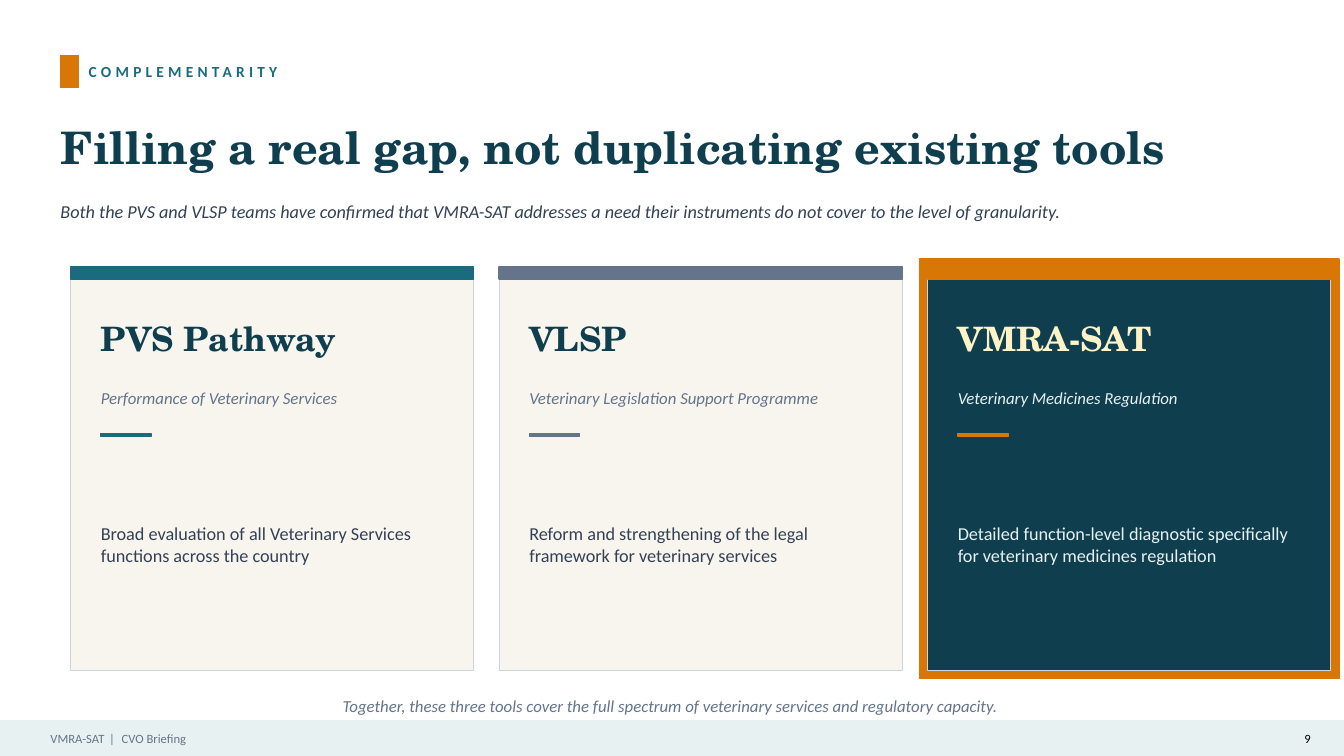
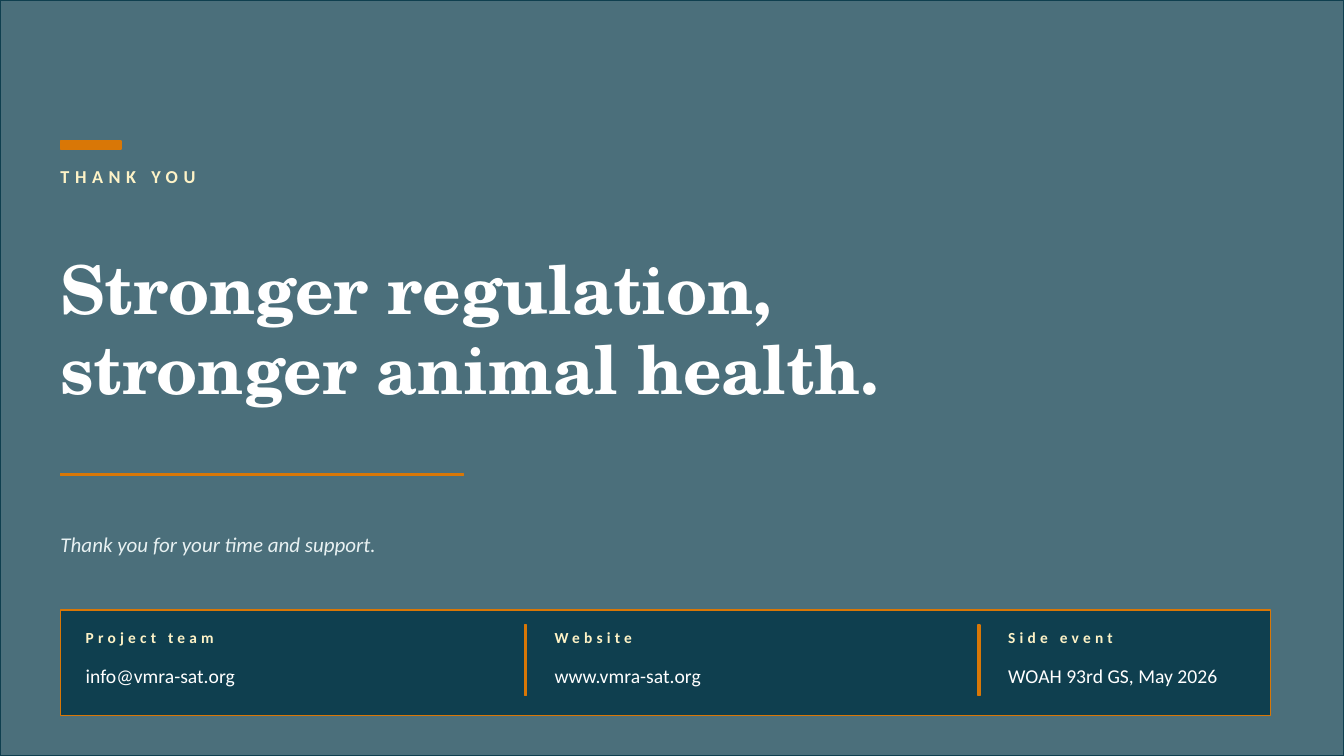
from lxml import etree
from pptx import Presentation
from pptx import util as u
from pptx.dml.color import RGBColor
from pptx.enum import shapes, text
from pptx.oxml import ns

PX = 9144
WIDTH, HEIGHT = 1333, 750
MARGIN = 60

NAVY, TEAL, ORANGE, SLATE = "0F3F4F", "1B6B7E", "D97706", "64748B"
INK, CREAM, MIST, WHITE = "334155", "FEF3C7", "E8F1F2", "FFFFFF"
PAPER, EDGE, BLACK = "F8F5EE", "CBD5E1", "000000"
SANS, SERIF = "Calibri", "TeX Gyre Schola"

SECTION = "COMPLEMENTARITY"
HEADLINE = "Filling a real gap, not duplicating existing tools"
LEAD = ("Both the PVS and VLSP teams have confirmed that VMRA-SAT addresses "
        "a need their instruments do not cover to the level of granularity.")
TOOLS = [
    {"name": "PVS Pathway", "full": "Performance of Veterinary Services",
     "role": "Broad evaluation of all Veterinary Services functions across the country",
     "accent": TEAL},
    {"name": "VLSP", "full": "Veterinary Legislation Support Programme",
     "role": "Reform and strengthening of the legal framework for veterinary services",
     "accent": SLATE},
    {"name": "VMRA-SAT", "full": "Veterinary Medicines Regulation",
     "role": "Detailed function-level diagnostic specifically for veterinary medicines regulation",
     "accent": ORANGE, "featured": True},
]
PLAIN = {"card": PAPER, "name": NAVY, "full": SLATE, "role": INK}
FEATURED = {"card": NAVY, "name": CREAM, "full": MIST, "role": MIST}
SUMMARY = ("Together, these three tools cover the full spectrum of "
           "veterinary services and regulatory capacity.")
FOOTER = [("VMRA-SAT", 0), (" | ", 1.4), ("CVO Briefing", 0)]
PAGE = "9"

THANKS = "THANK YOU"
CLOSING = ["Stronger regulation,", "stronger animal health."]
GRATITUDE = "Thank you for your time and support."
CONTACTS = [
    (85, 350, 450, "Project team", "info@vmra-sat.org"),
    (550, 350, 450, "Website", "www.vmra-sat.org"),
    (1000, 300, 300, "Side event", "WOAH 93rd GS, May 2026"),
]


def color(value):
    return RGBColor.from_string(value)


def place(part, left, top, width, height):
    part.left, part.top = left * PX, top * PX
    part.width, part.height = width * PX, height * PX


def block(slide, left, top, width, height, fill, line=None, weight=1, alpha=None):
    part = slide.shapes.add_shape(shapes.MSO_SHAPE.RECTANGLE,
                                  *(n * PX for n in (left, top, width, height)))
    part.shadow.inherit = False
    part.fill.solid()
    part.fill.fore_color.rgb = color(fill)
    part.line.color.rgb = color(line or fill)
    part.line.width = u.Pt(weight)
    if alpha:
        tint = part._element.spPr.find(ns.qn("a:solidFill"))[0]
        etree.SubElement(tint, ns.qn("a:alpha"), val=str(alpha * 1000))


def write(part, paragraphs, size, ink, face=SANS, bold=False, italic=False,
          align=text.PP_ALIGN.LEFT):
    frame = part.text_frame
    frame.word_wrap = True
    frame.auto_size = text.MSO_AUTO_SIZE.NONE
    frame.vertical_anchor = text.MSO_ANCHOR.MIDDLE
    frame.margin_left = frame.margin_right = frame.margin_top = frame.margin_bottom = 0
    for index, runs in enumerate(paragraphs):
        paragraph = frame.add_paragraph() if index else frame.paragraphs[0]
        paragraph.alignment = align
        for words, spacing in runs:
            run = paragraph.add_run()
            run.text = words
            font = run.font
            font.name, font.size, font.bold, font.italic = face, u.Pt(size), bold, italic
            font.color.rgb = color(ink)
            if spacing:
                run._r.get_or_add_rPr().set("spc", str(round(spacing * 100)))


def label(slide, left, top, width, height, words, size, ink, spacing=0, **style):
    part = slide.shapes.add_textbox(*(n * PX for n in (left, top, width, height)))
    runs = [(words, spacing)] if isinstance(words, str) else words
    write(part, [runs], size, ink, **style)


def headline(slide, top, width, height, lines, size, ink):
    title = slide.shapes.title
    title._element.getparent().append(title._element)
    place(title, MARGIN, top, width, height)
    write(title, [[(line, 0)] for line in lines], size, ink, face=SERIF, bold=True)


def footer(slide):
    block(slide, 0, 715, WIDTH, 35, MIST)
    label(slide, 50, 718, 600, 30, FOOTER, 9, SLATE)
    label(slide, 1250, 718, 50, 30, PAGE, 9, BLACK, align=text.PP_ALIGN.RIGHT)


def tool_card(slide, left, tool):
    top, side, halo, pad = 265, 400, 8, 30
    accent = tool["accent"]
    look = FEATURED if tool.get("featured") else PLAIN
    if look is FEATURED:
        block(slide, left - halo, top - halo, side + 2 * halo, side + 2 * halo, accent)
    block(slide, left, top, side, side, look["card"], EDGE, 0.5)
    block(slide, left, top, side, 12, accent)
    inner, width = left + pad, side - 2 * pad
    label(slide, inner, top + 40, width, 60, tool["name"], 24, look["name"],
          face=SERIF, bold=True)
    label(slide, inner, top + 105, width, 50, tool["full"], 12, look["full"], italic=True)
    block(slide, inner, top + 165, 50, 3, accent)
    label(slide, inner, top + 185, width, 180, tool["role"], 13, look["role"])


def complementarity(slide):
    block(slide, MARGIN, 55, 18, 32, ORANGE)
    label(slide, 88, 55, 600, 32, SECTION, 11, TEAL, 3, bold=True)
    headline(slide, 100, 1210, 90, [HEADLINE], 32, NAVY)
    label(slide, MARGIN, 185, 1210, 50, LEAD, 13, INK, italic=True)
    for index, tool in enumerate(TOOLS):
        tool_card(slide, 70 + 425 * index, tool)
    label(slide, MARGIN, 680, 1210, 40, SUMMARY, 12, SLATE, italic=True,
          align=text.PP_ALIGN.CENTER)
    footer(slide)


def thank_you(slide):
    block(slide, 0, 0, WIDTH, HEIGHT, NAVY, alpha=75)
    block(slide, MARGIN, 140, 60, 8, ORANGE)
    label(slide, MARGIN, 155, 800, 40, THANKS, 13, CREAM, 4, bold=True)
    headline(slide, 210, 1200, 230, CLOSING, 48, WHITE)
    block(slide, MARGIN, 470, 400, 2, ORANGE)
    label(slide, MARGIN, 490, 1100, 100, GRATITUDE, 15, MIST, italic=True)
    block(slide, MARGIN, 605, 1200, 105, NAVY, ORANGE)
    for index, (left, heading_width, detail_width, heading, detail) in enumerate(CONTACTS):
        if index:
            block(slide, left - 30, 620, 2, 70, ORANGE)
        label(slide, left, 615, heading_width, 35, heading, 11, CREAM, 3, bold=True)
        label(slide, left, 650, detail_width, 40, detail, 14, WHITE)


def main():
    deck = Presentation()
    deck.slide_width, deck.slide_height = WIDTH * PX, HEIGHT * PX
    for build in (complementarity, thank_you):
        build(deck.slides.add_slide(deck.slide_layouts[5]))
    deck.save("out.pptx")


if __name__ == "__main__":
    main()
